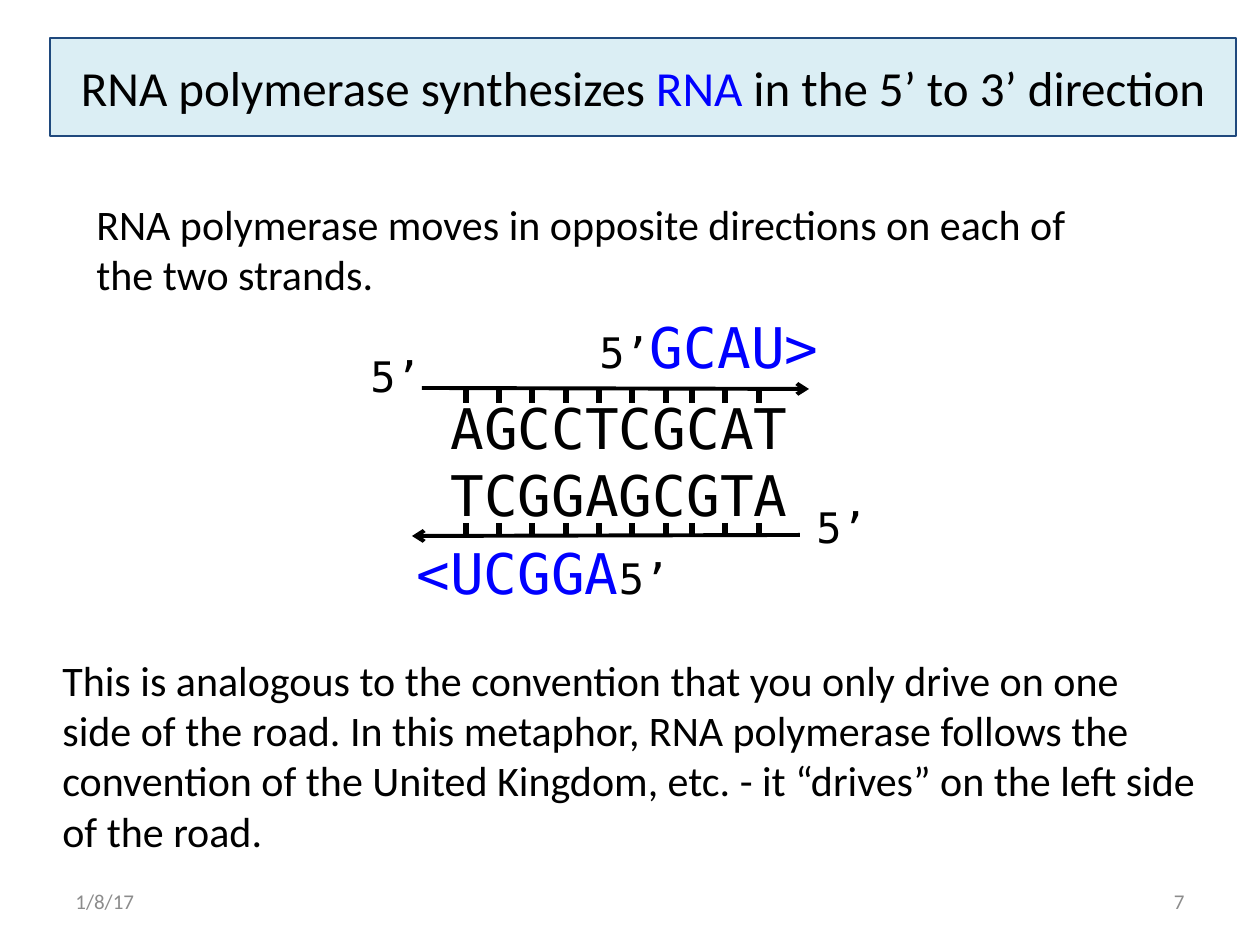
from lxml.etree import SubElement
from pptx import Presentation
from pptx.dml.color import RGBColor
from pptx.enum.shapes import MSO_CONNECTOR, MSO_SHAPE
from pptx.enum.text import MSO_ANCHOR, PP_ALIGN
from pptx.oxml.ns import qn
from pptx.util import Emu, Pt

EMU_PER_PX = 914400 / 126
BLACK, BLUE, GRAY = "000000", "0000FF", "8C8C8C"
SANS, MONO = "Calibri", "DejaVu Sans Mono"


def px(length):
    return Emu(round(length * EMU_PER_PX))


def color(value):
    return RGBColor.from_string(value)


class SlideBuilder:
    """Holds the slide and its text style, and draws each kind of element."""

    def __init__(self, slide):
        self.slide = slide
        self.font = SANS

    def add_runs(self, shape, paragraphs, font, align, anchor, wrap):
        """Each paragraph is a list of (text, size, color) runs."""
        frame = shape.text_frame
        frame.word_wrap = wrap
        frame.vertical_anchor = anchor
        for index, runs in enumerate(paragraphs):
            paragraph = frame.add_paragraph() if index else frame.paragraphs[0]
            paragraph.alignment = align
            for text, size, run_color in runs:
                run = paragraph.add_run()
                run.text = text
                run.font.name = font or self.font
                run.font.size = Pt(size)
                run.font.color.rgb = color(run_color)

    def text(self, box, paragraphs, font=None, align=PP_ALIGN.LEFT,
             anchor=MSO_ANCHOR.TOP, wrap=False):
        shape = self.slide.shapes.add_textbox(*map(px, box))
        self.add_runs(shape, paragraphs, font, align, anchor, wrap)

    def banner(self, box, runs, fill, outline):
        shape = self.slide.shapes.add_shape(MSO_SHAPE.RECTANGLE, *map(px, box))
        shape.shadow.inherit = False
        shape.fill.solid()
        shape.fill.fore_color.rgb = color(fill)
        shape.line.color.rgb = color(outline)
        shape.line.width = Pt(1)
        self.add_runs(shape, [runs], None, PP_ALIGN.CENTER, MSO_ANCHOR.MIDDLE, True)

    def line(self, start, end, width, arrow=False):
        connector = self.slide.shapes.add_connector(
            MSO_CONNECTOR.STRAIGHT, *map(px, start + end))
        connector.line.color.rgb = color(BLACK)
        connector.line.width = Pt(width)
        properties = connector._element.spPr
        if arrow:
            SubElement(properties.get_or_add_ln(), qn("a:tailEnd"), type="arrow")
        SubElement(properties, qn("a:effectLst"))

    def ticks(self, top, bottom):
        """Ten base ticks; the last three sit slightly closer in."""
        for index in range(10):
            x = 466 + index * 100 // 3 - (7 if index >= 7 else 0)
            self.line((x, top), (x, bottom), 3)


def main():
    presentation = Presentation()
    presentation.slide_width, presentation.slide_height = px(1260), px(945)
    slide = presentation.slides.add_slide(presentation.slide_layouts[6])
    builder = SlideBuilder(slide)

    # Title
    builder.banner((50, 38, 1186, 98), [
        ("RNA polymerase synthesizes ", 28, BLACK),
        ("RNA", 28, BLUE),
        (" in the 5’ to 3’ direction", 28, BLACK),
    ], "DBEEF4", "1F497D")

    # Date and slide number
    for left, label, align in ((63, "1/8/17", PP_ALIGN.LEFT),
                               (903, "7", PP_ALIGN.RIGHT)):
        builder.text((left, 876, 294, 50), [[(label, 12, GRAY)]],
                     align=align, anchor=MSO_ANCHOR.MIDDLE, wrap=True)

    # DNA strands with their 5’ ends
    builder.text((438, 387, 367, 149),
                 [[(strand, 32, BLACK)] for strand in ("AGCCTCGCAT", "TCGGAGCGTA")],
                 MONO)
    for left, top in ((358, 344), (804, 495)):
        builder.text((left, top, 77, 63), [[("5’", 24, BLACK)]], MONO)

    # Base ticks and strand direction arrows
    builder.ticks(389, 403)
    builder.line((422, 388), (809, 389), 2.25, arrow=True)
    builder.ticks(523, 537)
    builder.line((800, 535), (412, 536), 2.25, arrow=True)

    # Introduction
    builder.text((84, 192, 1007, 115), [
        [("RNA polymerase moves in opposite directions on each of", 24, BLACK)],
        [("the two strands.", 24, BLACK)],
    ])

    # RNA transcripts
    builder.text((587, 306, 246, 81),
                 [[("5’", 24, BLACK), ("GCAU>", 32, BLUE)]], MONO)
    builder.text((404, 532, 280, 81),
                 [[("<UCGGA", 32, BLUE), ("5’", 24, BLACK)]], MONO)

    # Driving metaphor
    builder.text((50, 648, 1169, 217), [
        [("This is analogous to the convention that you only drive on one", 24, BLACK)],
        [("side of the road. In this metaphor, RNA polymerase follows the "
          "convention of the United Kingdom, etc. - it “drives” on the left "
          "side of the road.", 24, BLACK)],
    ], wrap=True)

    presentation.save("out.pptx")


if __name__ == "__main__":
    main()
